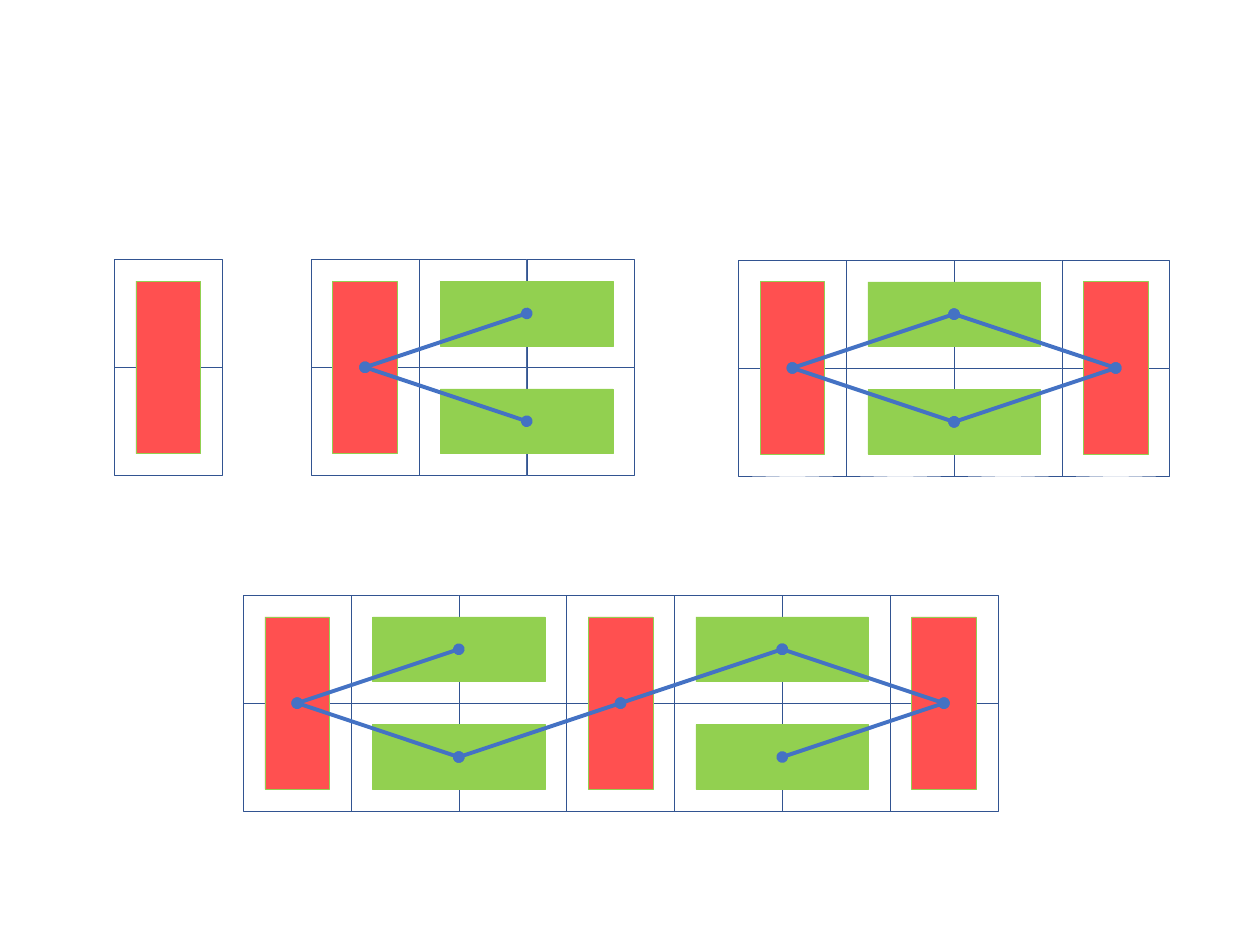
"""Draw four brick-bond patterns with the links between neighbouring bricks."""
from dataclasses import dataclass

from lxml import etree
from pptx import Presentation
from pptx.dml.color import RGBColor
from pptx.enum.shapes import MSO_CONNECTOR, MSO_SHAPE
from pptx.oxml.ns import qn
from pptx.util import Pt

RECTANGLE = MSO_SHAPE.RECTANGLE
STRAIGHT = MSO_CONNECTOR.STRAIGHT
BLANK_LAYOUT = 6
TOP, BOTTOM = 0, 1


@dataclass(frozen=True)
class Theme:
    """Colours and lengths in points."""
    cell_fill: str = "FFFFFF"
    cell_edge: str = "325491"
    upright: str = "FF5050"
    flat: str = "92D050"
    link: str = "4472C4"
    hairline: float = 0.25
    link_width: float = 2.25
    cell: float = 61.6
    margin: float = 12.3


class BrickSlide:
    """Holds the theme and the current slide, and draws brick patterns."""

    def __init__(self, slide, theme):
        """Keep the slide and its theme."""
        self.slide = slide
        self.theme = theme

    def box(self, group, left, top, width, height, fill, edge):
        """Draw a filled rectangle with a thin edge."""
        shape = group.shapes.add_shape(
            RECTANGLE, Pt(left), Pt(top), Pt(width), Pt(height))
        shape.shadow.inherit = False
        shape.fill.solid()
        shape.fill.fore_color.rgb = RGBColor.from_string(fill)
        shape.line.color.rgb = RGBColor.from_string(edge)
        shape.line.width = Pt(self.theme.hairline)

    def brick(self, group, left, top, columns, rows, fill):
        """Draw the grid cells and the brick lying inside them."""
        theme = self.theme
        for row in range(rows):
            for column in range(columns):
                self.box(group, left + column * theme.cell, top + row * theme.cell,
                         theme.cell, theme.cell, theme.cell_fill, theme.cell_edge)
        self.box(group, left + theme.margin, top + theme.margin,
                 columns * theme.cell - 2 * theme.margin,
                 rows * theme.cell - 2 * theme.margin, fill, theme.flat)

    def link(self, group, start, end):
        """Join two brick centres with a line that has a dot at each end."""
        connector = group.shapes.add_connector(
            STRAIGHT, *(Pt(value) for value in (*start, *end)))
        connector.line.color.rgb = RGBColor.from_string(self.theme.link)
        connector.line.width = Pt(self.theme.link_width)
        outline = connector.line._get_or_add_ln()
        for tag in ("a:headEnd", "a:tailEnd"):
            etree.SubElement(outline, qn(tag), type="oval")
        etree.SubElement(connector._element.spPr, qn("a:effectLst"))

    def pattern(self, left, top, uprights, flat_pairs, links):
        """Alternate upright bricks with pairs of flat ones, then link them."""
        cell = self.theme.cell
        period = 3 * cell
        group = self.slide.shapes.add_group_shape()
        for index in range(uprights):
            start = left + index * period
            self.brick(group, start, top, 1, 2, self.theme.upright)
            if index < flat_pairs:
                for tier in (TOP, BOTTOM):
                    self.brick(group, start + cell, top + tier * cell,
                               2, 1, self.theme.flat)
        for upright, pair, tier in links:
            self.link(group,
                      (left + upright * period + cell / 2, top + cell),
                      (left + pair * period + 2 * cell, top + (tier + 0.5) * cell))


def main():
    """Build the slide and save it."""
    deck = Presentation()
    deck.slide_width, deck.slide_height = Pt(720), Pt(540)
    slide = deck.slides.add_slide(deck.slide_layouts[BLANK_LAYOUT])
    bricks = BrickSlide(slide, Theme())
    fork = [(0, 0, TOP), (0, 0, BOTTOM)]
    ring = fork + [(1, 0, TOP), (1, 0, BOTTOM)]
    chain = fork + [(1, 0, BOTTOM), (1, 1, TOP), (2, 1, TOP), (2, 1, BOTTOM)]
    bricks.pattern(139, 340.2, 3, 2, chain)
    bricks.pattern(65.4, 148.3, 1, 0, [])
    bricks.pattern(422, 148.7, 2, 1, ring)
    bricks.pattern(177.8, 148.3, 1, 1, fork)
    deck.save("out.pptx")


if __name__ == "__main__":
    main()
